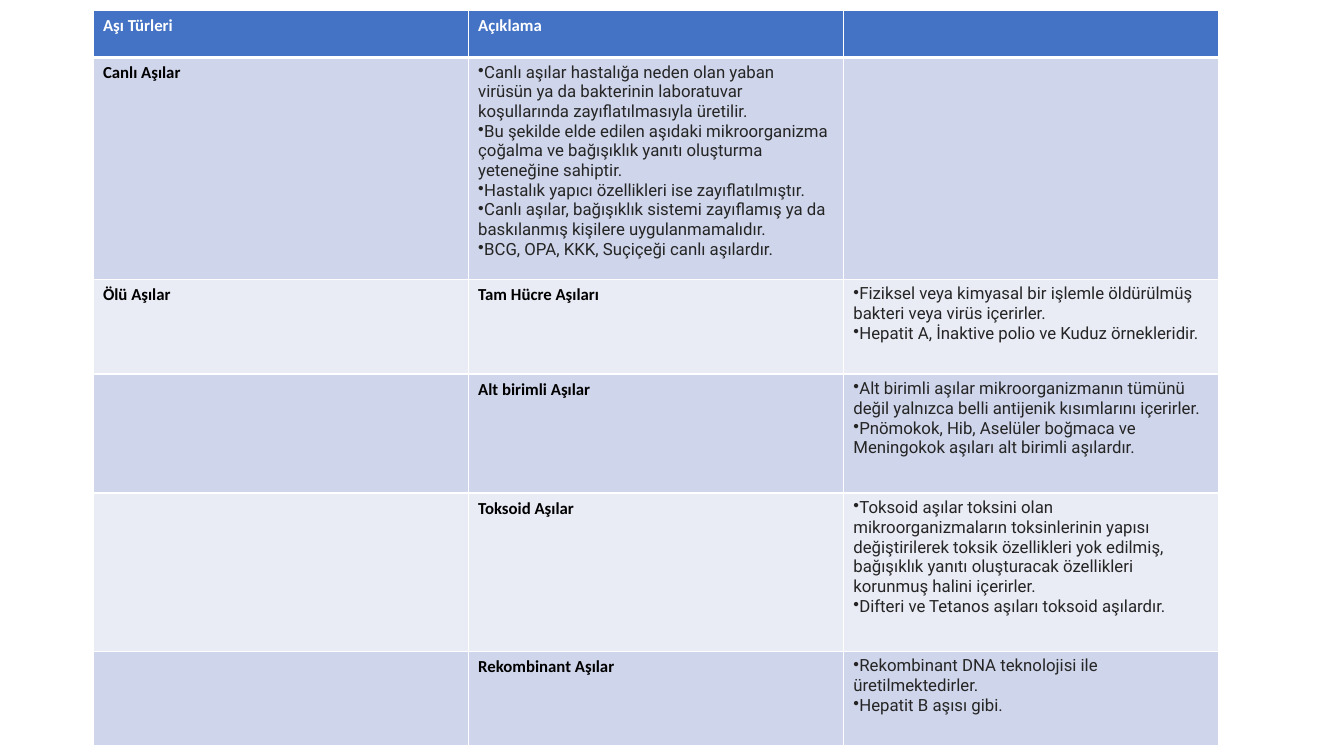
import dataclasses

import pptx
import pptx.dml.color
import pptx.oxml
import pptx.oxml.ns
import pptx.table
import pptx.util

COLOURS = {
    "header": "4472C4",
    "dark band": "CFD5EA",
    "light band": "E9EBF5",
    "white": "FFFFFF",
    "label": "000000",
    "body": "252525",
}
THIN, THICK = 1, 3
COLUMN_WIDTH = 268


@dataclasses.dataclass
class Entry:
    paragraphs: list[str]
    bulleted: bool = False


@dataclasses.dataclass
class VaccineRow:
    height: float
    entries: dict[int, Entry]  # column number -> content


def label(text: str) -> Entry:
    return Entry([text])


def bullets(*points: str) -> Entry:
    return Entry(list(points), bulleted=True)


ROWS = [
    VaccineRow(33.6, {0: label("Aşı Türleri"), 1: label("Açıklama")}),
    VaccineRow(158.4, {
        0: label("Canlı Aşılar"),
        1: bullets(
            "Canlı aşılar hastalığa neden olan yaban virüsün ya da bakterinin "
            "laboratuvar koşullarında zayıflatılmasıyla üretilir.",
            "Bu şekilde elde edilen aşıdaki mikroorganizma çoğalma ve bağışıklık "
            "yanıtı oluşturma yeteneğine sahiptir.",
            "Hastalık yapıcı özellikleri ise zayıflatılmıştır.",
            "Canlı aşılar, bağışıklık sistemi zayıflamış ya da baskılanmış "
            "kişilere uygulanmamalıdır.",
            "BCG, OPA, KKK, Suçiçeği canlı aşılardır.",
        ),
    }),
    VaccineRow(67.8, {
        0: label("Ölü Aşılar"),
        1: label("Tam Hücre Aşıları"),
        2: bullets(
            "Fiziksel veya kimyasal bir işlemle öldürülmüş bakteri veya virüs içerirler.",
            "Hepatit A, İnaktive polio ve Kuduz örnekleridir.",
        ),
    }),
    VaccineRow(85, {
        1: label("Alt birimli Aşılar"),
        2: bullets(
            "Alt birimli aşılar mikroorganizmanın tümünü değil yalnızca belli "
            "antijenik kısımlarını içerirler.",
            "Pnömokok, Hib, Aselüler boğmaca ve Meningokok aşıları alt birimli aşılardır.",
        ),
    }),
    VaccineRow(113, {
        1: label("Toksoid Aşılar"),
        2: bullets(
            "Toksoid aşılar toksini olan mikroorganizmaların toksinlerinin yapısı "
            "değiştirilerek toksik özellikleri yok edilmiş, bağışıklık yanıtı "
            "oluşturacak özellikleri korunmuş halini içerirler.",
            "Difteri ve Tetanos aşıları toksoid aşılardır.",
        ),
    }),
    VaccineRow(67.8, {
        1: label("Rekombinant Aşılar"),
        2: bullets(
            "Rekombinant DNA teknolojisi ile üretilmektedirler.",
            "Hepatit B aşısı gibi.",
        ),
    }),
]


def write_paragraph(para, text: str, *, font: str, colour: str, bold: bool,
                    bulleted: bool = False, size: float = 12) -> None:
    if bulleted:
        properties = para._p.get_or_add_pPr()
        properties.set("marL", "0")
        properties.set("indent", "0")
        properties.append(pptx.oxml.parse_xml(
            f'<a:buChar {pptx.oxml.ns.nsdecls("a")} char="•"/>'))
    span = para.add_run()
    span.text = text
    span.font.name = font
    span.font.size = pptx.util.Pt(size)
    span.font.bold = bold
    span.font.color.rgb = pptx.dml.color.RGBColor.from_string(COLOURS[colour])


def set_borders(cell: pptx.table._Cell, top: float, bottom: float) -> None:
    properties = cell._tc.get_or_add_tcPr()
    for side, width in {"L": THIN, "R": THIN, "T": top, "B": bottom}.items():
        properties.append(pptx.oxml.parse_xml(
            f'<a:ln{side} {pptx.oxml.ns.nsdecls("a")} w="{pptx.util.Pt(width)}">'
            f'<a:solidFill><a:srgbClr val="{COLOURS["white"]}"/></a:solidFill>'
            f'</a:ln{side}>'))


def fill_cell(cell: pptx.table._Cell, colour: str) -> None:
    cell.fill.solid()
    cell.fill.fore_color.rgb = pptx.dml.color.RGBColor.from_string(COLOURS[colour])


def write_entry(cell: pptx.table._Cell, entry: Entry, label_colour: str) -> None:
    frame = cell.text_frame
    for index, text in enumerate(entry.paragraphs):
        para = frame.add_paragraph() if index else frame.paragraphs[0]
        if entry.bulleted:
            write_paragraph(para, text, font="Roboto", colour="body",
                            bold=False, bulleted=True)
        else:
            write_paragraph(para, text, font="Calibri", colour=label_colour, bold=True)


def draw_table(page) -> None:
    column_count = 3
    frame = page.shapes.add_table(
        len(ROWS), column_count, pptx.util.Pt(66.4), pptx.util.Pt(7.4),
        pptx.util.Pt(COLUMN_WIDTH * column_count),
        pptx.util.Pt(sum(row.height for row in ROWS)))
    table = frame.table
    for column in table.columns:
        column.width = pptx.util.Pt(COLUMN_WIDTH)

    for row_number, row in enumerate(ROWS):
        table.rows[row_number].height = pptx.util.Pt(row.height)
        is_header = row_number == 0
        band = "dark band" if row_number % 2 else "light band"
        for column_number in range(column_count):
            cell = table.cell(row_number, column_number)
            # A thick rule divides the header from the body
            set_borders(cell, top=THICK if row_number == 1 else THIN,
                        bottom=THICK if is_header else THIN)
            fill_cell(cell, "header" if is_header else band)
            if column_number in row.entries:
                write_entry(cell, row.entries[column_number],
                            "white" if is_header else "label")


def main() -> None:
    deck = pptx.Presentation()
    deck.slide_width = pptx.util.Pt(960)
    deck.slide_height = pptx.util.Pt(540)
    # Blank layout: the slide has no title
    page = deck.slides.add_slide(deck.slide_layouts[6])
    draw_table(page)
    deck.save("out.pptx")


if __name__ == "__main__":
    main()
